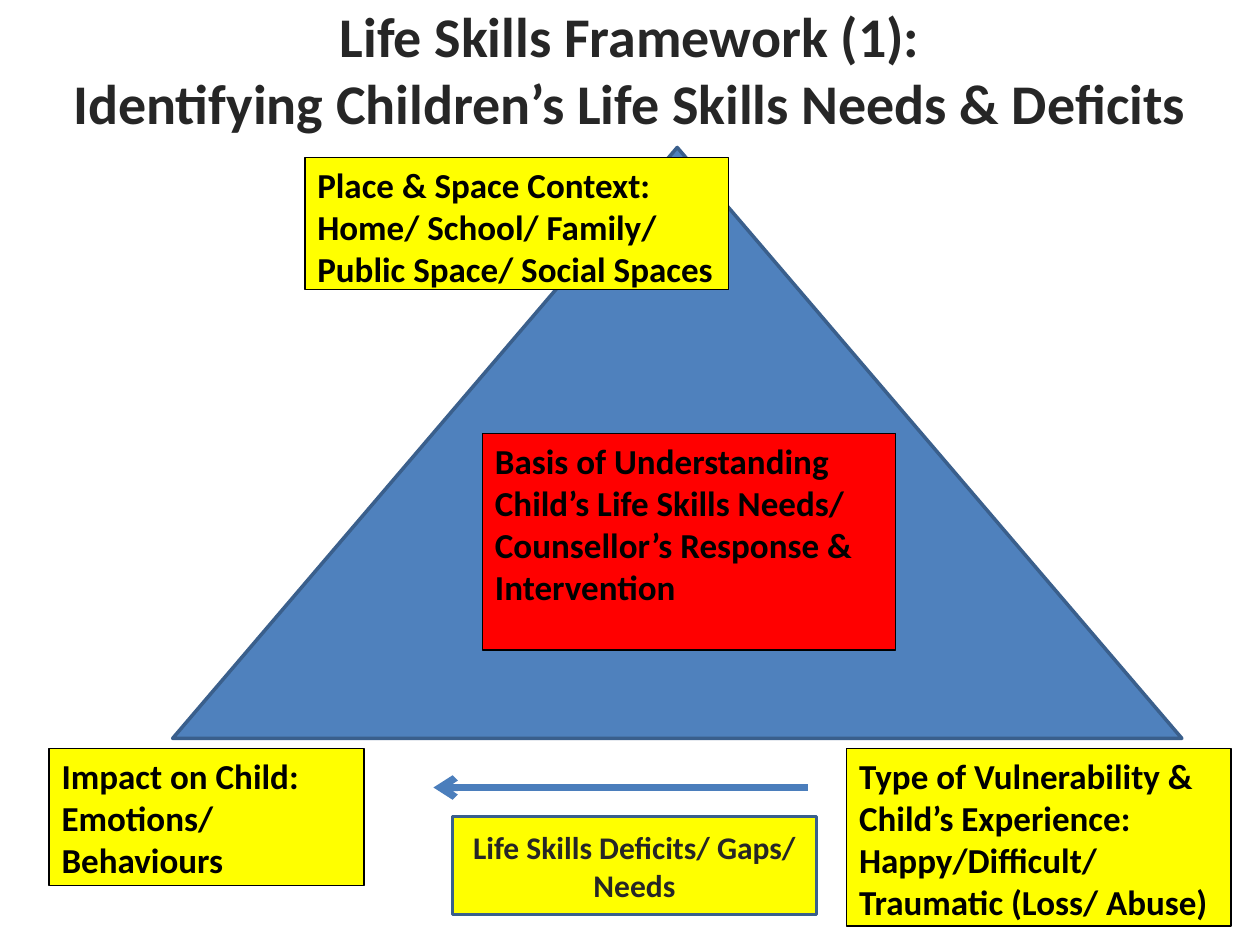
import pptx
import pptx.util
import pptx.dml.color
import pptx.enum.shapes
import pptx.enum.text
import pptx.oxml.ns
import lxml.etree

Inches = pptx.util.Inches
Pt = pptx.util.Pt
SHAPE = pptx.enum.shapes.MSO_SHAPE
ANCHOR = pptx.enum.text.MSO_ANCHOR
ALIGN = pptx.enum.text.PP_ALIGN

YELLOW = "FFFF00"
RED = "FF0000"
BLACK = "000000"
DARK_GREY = "262626"
BLUE = "4F81BD"
DARK_BLUE = "3A5F8C"
ARROW_BLUE = "4B7EBC"


def color(value):
    return pptx.dml.color.RGBColor.from_string(value)


def add_filled_shape(shapes, kind, box, fill, line, line_width):
    shape = shapes.add_shape(kind, *map(Inches, box))
    shape.shadow.inherit = False
    shape.fill.solid()
    shape.fill.fore_color.rgb = color(fill)
    shape.line.color.rgb = color(line)
    shape.line.width = Pt(line_width)
    return shape


def write_text(shape, text, size, text_color, align, anchor, space_after=0):
    frame = shape.text_frame
    frame.word_wrap = True
    frame.vertical_anchor = anchor
    frame.text = text
    for paragraph in frame.paragraphs:
        paragraph.alignment = align
        paragraph.space_after = Pt(space_after)
        paragraph.font.name = "Calibri"
        paragraph.font.size = Pt(size)
        paragraph.font.bold = True
        paragraph.font.color.rgb = color(text_color)


def add_title(shapes, box, text):
    title = shapes.add_textbox(*map(Inches, box))
    write_text(title, text, 32, DARK_GREY, ALIGN.CENTER, ANCHOR.MIDDLE)


def add_corner_box(shapes, box, text, fill=YELLOW):
    shape = add_filled_shape(shapes, SHAPE.RECTANGLE, box, fill, BLACK, 0.75)
    write_text(shape, text, 20, BLACK, ALIGN.LEFT, ANCHOR.TOP, 10)


def add_arrow(shapes, start, end):
    arrow = shapes.add_connector(
        pptx.enum.shapes.MSO_CONNECTOR.STRAIGHT, *map(Inches, start + end)
    )
    arrow.line.color.rgb = color(ARROW_BLUE)
    arrow.line.width = Pt(4)
    qn = pptx.oxml.ns.qn
    tail = lxml.etree.SubElement(arrow.line._get_or_add_ln(), qn("a:tailEnd"))
    tail.set("type", "arrow")
    lxml.etree.SubElement(arrow._element.spPr, qn("a:effectLst"))


def add_deficits_label(shapes, box, text):
    label = add_filled_shape(shapes, SHAPE.RECTANGLE, box, YELLOW, DARK_BLUE, 2)
    write_text(label, text, 18, DARK_GREY, ALIGN.CENTER, ANCHOR.MIDDLE)


def build_framework_slide(presentation):
    slide = presentation.slides.add_slide(presentation.slide_layouts[6])
    shapes = slide.shapes
    add_filled_shape(
        shapes, SHAPE.ISOSCELES_TRIANGLE, (1.37, 1.17, 8.01, 4.69), BLUE, DARK_BLUE, 2
    )
    add_corner_box(
        shapes,
        (6.72, 5.94, 3.05, 1.41),
        "Type of Vulnerability & Child’s Experience: "
        "Happy/Difficult/ Traumatic (Loss/ Abuse)",
    )
    add_title(
        shapes,
        (0, 0, 10, 1.09),
        "Life Skills Framework (1):\n"
        "Identifying Children’s Life Skills Needs & Deficits",
    )

    group = shapes.add_group_shape().shapes
    add_corner_box(
        group,
        (2.42, 1.25, 3.36, 1.05),
        "Place & Space Context: Home/ School/ Family/ Public Space/ Social Spaces",
    )
    add_corner_box(
        group, (0.39, 5.94, 2.5, 1.09), "Impact on Child: Emotions/ Behaviours"
    )
    add_corner_box(
        group,
        (3.83, 3.44, 3.28, 1.72),
        "Basis of Understanding Child’s Life Skills Needs/ "
        "Counsellor’s Response & Intervention",
        RED,
    )
    add_arrow(group, (6.41, 6.25), (3.44, 6.25))
    add_deficits_label(
        group, (3.59, 6.48, 2.89, 0.78), "Life Skills Deficits/ Gaps/ Needs"
    )


def main():
    presentation = pptx.Presentation()
    presentation.slide_width = Inches(10)
    presentation.slide_height = Inches(7.5)
    build_framework_slide(presentation)
    presentation.save("out.pptx")


if __name__ == "__main__":
    main()
